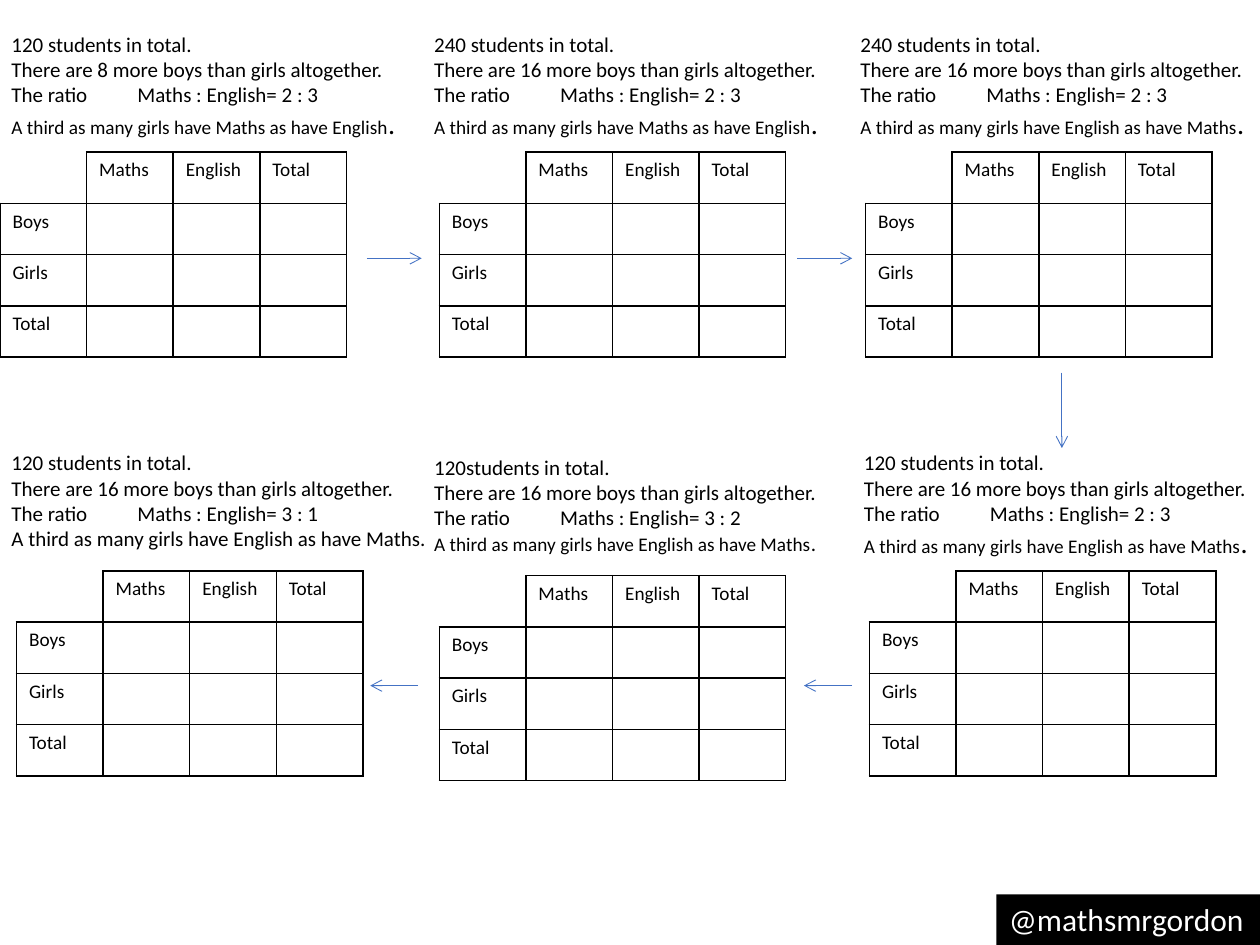
from lxml.etree import SubElement
from pptx import Presentation
from pptx.dml.color import RGBColor
from pptx.enum.shapes import MSO_CONNECTOR, MSO_SHAPE
from pptx.enum.text import MSO_ANCHOR, PP_ALIGN
from pptx.oxml.ns import qn
from pptx.util import Pt

FONT = "Calibri"
BLACK, WHITE, BLUE = "000000", "FFFFFF", "4472C4"
HANDLE = "@mathsmrgordon"
GRID = [
    ["", "Maths", "English", "Total"],
    ["Boys", "", "", ""],
    ["Girls", "", "", ""],
    ["Total", "", "", ""],
]
FEWER_MATHS = "A third as many girls have Maths as have English"
FEWER_ENGLISH = "A third as many girls have English as have Maths"

# left, top, width, table left, students, difference, ratio, clue, clue size, full stop size
PUZZLES = [
    (-0.5, 14.2, 257, 0, "120 ", 8, "2 : 3", FEWER_MATHS, 11, 16),
    (241, 14.2, 242, 251, "240 ", 16, "2 : 3", FEWER_MATHS, 11, 16),
    (484.6, 14.2, 242, 494.6, "240 ", 16, "2 : 3", FEWER_ENGLISH, 11, 16),
    (486.6, 253.5, 242, 496.8, "120 ", 16, "2 : 3", FEWER_ENGLISH, 11, 16),
    (241, 256.2, 242, 251, "120", 16, "3 : 2", FEWER_ENGLISH, 11, 12),
    (-0.5, 253.5, 257, 9.4, "120 ", 16, "3 : 1", FEWER_ENGLISH, 12, 12),
]
ARROWS = [
    (209.6, 147.6, 241, 147.6),
    (455.6, 147.6, 487, 147.6),
    (606.8, 213, 606.8, 256),
    (487, 391.8, 459.4, 391.8),
    (239, 391.8, 211.6, 391.8),
]
CLUE_HEIGHT = 72.7
COLUMN, ROW = 49.5, 29.3


def rgb(value):
    return RGBColor.from_string(value)


def style(font, size, color=BLACK):
    font.name, font.size, font.color.rgb = FONT, Pt(size), rgb(color)


def add_clues(slide, left, top, width, students, difference, ratio, clue, clue_size, stop_size):
    clues = slide.shapes.add_textbox(Pt(left), Pt(top), Pt(width), Pt(CLUE_HEIGHT)).text_frame
    clues.word_wrap = True
    facts = [
        f"{students}students in total.",
        f"There are {difference} more boys than girls altogether.",
        f"The ratio \tMaths : English= {ratio}",
    ]
    clues.text = "\n".join(facts)
    for fact in clues.paragraphs:
        style(fact.font, 12)
    last = clues.add_paragraph()
    for words, size in ((clue, clue_size), (".", stop_size)):
        run = last.add_run()
        run.text = words
        style(run.font, size)


def add_border(cell, edge):
    line = SubElement(cell._tc.get_or_add_tcPr(), qn(f"a:ln{edge}"), w=str(Pt(1)))
    fill = SubElement(line, qn("a:solidFill"))
    SubElement(fill, qn("a:srgbClr"), val=BLACK)


def add_grid(slide, left, top):
    size = len(GRID)
    table = slide.shapes.add_table(
        size, size, Pt(left), Pt(top), Pt(COLUMN * size), Pt(ROW * size)
    ).table
    table.first_row = table.horz_banding = False
    for column in table.columns:
        column.width = Pt(COLUMN)
    for r, labels in enumerate(GRID):
        table.rows[r].height = Pt(ROW)
        for c, label in enumerate(labels):
            cell = table.cell(r, c)
            cell.text = label
            style(cell.text_frame.paragraphs[0].font, 11)
            for edge in "RB" if r == c == 0 else "LRTB":
                add_border(cell, edge)
            cell.fill.background()


def add_arrow(slide, *ends):
    arrow = slide.shapes.add_connector(MSO_CONNECTOR.STRAIGHT, *map(Pt, ends))
    arrow.line.color.rgb = rgb(BLUE)
    arrow.line.width = Pt(0.5)
    SubElement(arrow.line._get_or_add_ln(), qn("a:tailEnd"), type="arrow")
    SubElement(arrow._element.spPr, qn("a:effectLst"))


def add_handle(slide):
    tag = slide.shapes.add_shape(MSO_SHAPE.RECTANGLE, Pt(569.4), Pt(511), Pt(150.6), Pt(29))
    tag.shadow.inherit = False
    tag.fill.solid()
    tag.fill.fore_color.rgb = rgb(BLACK)
    tag.line.fill.background()
    tag.text_frame.text = HANDLE
    tag.text_frame.word_wrap = False
    tag.text_frame.vertical_anchor = MSO_ANCHOR.TOP
    name = tag.text_frame.paragraphs[0]
    name.alignment = PP_ALIGN.LEFT
    style(name.font, 18, WHITE)


def main():
    deck = Presentation()
    deck.slide_width, deck.slide_height = Pt(720), Pt(540)
    slide = deck.slides.add_slide(deck.slide_layouts[6])
    add_handle(slide)
    for left, top, width, grid_left, *facts in PUZZLES:
        add_clues(slide, left, top, width, *facts)
        add_grid(slide, grid_left, top + CLUE_HEIGHT)
    for ends in ARROWS:
        add_arrow(slide, *ends)
    deck.save("out.pptx")


if __name__ == "__main__":
    main()
